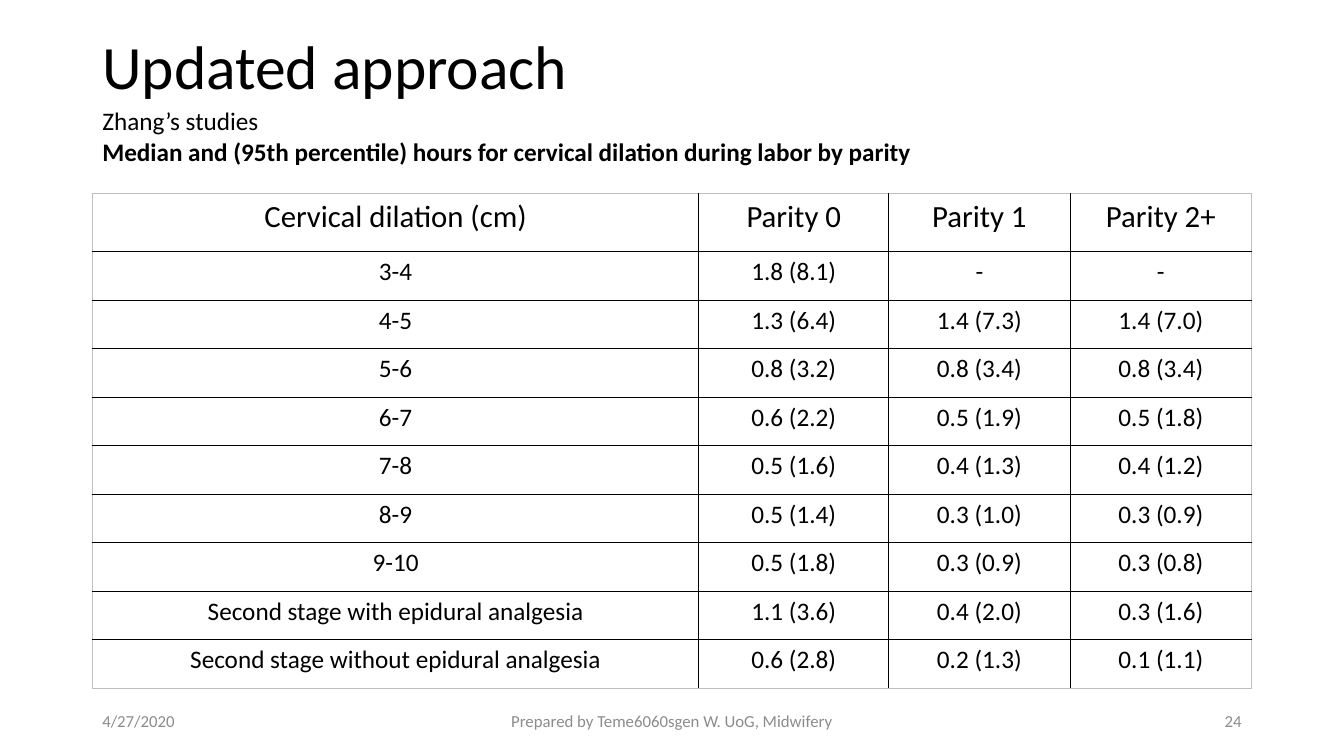
from lxml import etree
from pptx import Presentation
from pptx import util as u
from pptx.dml.color import RGBColor
from pptx.enum import text
from pptx.oxml import ns

# The slide is a grid of 160 columns by 90 rows of square units.
COLS, ROWS = 160, 90
UNIT = u.Inches(1) / 12
LEFT, WIDE = 11, 138

BLACK = RGBColor(0x00, 0x00, 0x00)
GRAY = RGBColor(0x8C, 0x8C, 0x8C)
PALE = RGBColor(0xBF, 0xBF, 0xBF)
FONT = "Calibri"

MID = text.MSO_ANCHOR.MIDDLE
CENTER = text.PP_ALIGN.CENTER
RIGHT = text.PP_ALIGN.RIGHT

TITLE = {"size": u.Pt(44)}
BODY = {"size": u.Pt(18)}
BOLD = {**BODY, "bold": True}
HEAD = {"size": u.Pt(22)}
FOOT = {"size": u.Pt(12), "color": GRAY}

WIDTHS = [72.2, 22.6, 21.6, 21.6]
HEAD_ROW, BODY_ROW = 6.95, 5.78
HOURS = [
    ["Cervical dilation (cm)", "Parity 0", "Parity 1", "Parity 2+"],
    ["3-4", "1.8 (8.1)", "-", "-"],
    ["4-5", "1.3 (6.4)", "1.4 (7.3)", "1.4 (7.0)"],
    ["5-6", "0.8 (3.2)", "0.8 (3.4)", "0.8 (3.4)"],
    ["6-7", "0.6 (2.2)", "0.5 (1.9)", "0.5 (1.8)"],
    ["7-8", "0.5 (1.6)", "0.4 (1.3)", "0.4 (1.2)"],
    ["8-9", "0.5 (1.4)", "0.3 (1.0)", "0.3 (0.9)"],
    ["9-10", "0.5 (1.8)", "0.3 (0.9)", "0.3 (0.8)"],
    ["Second stage with epidural analgesia", "1.1 (3.6)", "0.4 (2.0)", "0.3 (1.6)"],
    ["Second stage without epidural analgesia", "0.6 (2.8)", "0.2 (1.3)", "0.1 (1.1)"],
]


def span(count):
    """Turn grid units into a length."""
    return u.Emu(round(count * UNIT))


def write(para, words, look, align=None):
    run = para.add_run()
    run.text = words
    para.alignment = align
    for key, value in {"name": FONT, "color": BLACK, **look}.items():
        if key == "color":
            run.font.color.rgb = value
        else:
            setattr(run.font, key, value)


def add_text(slide, place, lines, anchor=None, align=None, space=None):
    """Add a text box; lines holds pairs of words and look."""
    frame = slide.shapes.add_textbox(*map(span, place)).text_frame
    frame.word_wrap = True
    frame.vertical_anchor = anchor
    for num, (words, look) in enumerate(lines):
        para = frame.add_paragraph() if num else frame.paragraphs[0]
        para.line_spacing = space
        write(para, words, look, align)


def add_edge(cell, side, outer):
    """Draw one cell border, paler and thinner on the table's rim."""
    width, color = (u.Pt(0.5), PALE) if outer else (u.Pt(1), BLACK)
    props = cell._tc.get_or_add_tcPr()
    line = etree.SubElement(props, ns.qn(f"a:ln{side}"), w=str(width))
    fill = etree.SubElement(line, ns.qn("a:solidFill"))
    etree.SubElement(fill, ns.qn("a:srgbClr"), val=str(color))


def add_table(slide, left, top, data):
    heights = [HEAD_ROW] + [BODY_ROW] * (len(data) - 1)
    size = (span(sum(WIDTHS)), span(sum(heights)))
    table = slide.shapes.add_table(
        len(data), len(WIDTHS), span(left), span(top), *size).table
    table.first_row = table.horz_banding = False
    for col, width in zip(table.columns, WIDTHS):
        col.width = span(width)
    for row, height in zip(table.rows, heights):
        row.height = span(height)
    for i, row in enumerate(data):
        for j, words in enumerate(row):
            cell = table.cell(i, j)
            write(cell.text_frame.paragraphs[0], words, BODY if i else HEAD, CENTER)
            rim = {"L": j == 0, "R": j == len(row) - 1,
                   "T": i == 0, "B": i == len(data) - 1}
            for side, outer in rim.items():
                add_edge(cell, side, outer)
            cell.fill.background()


def add_footer(slide):
    top, high = 83.4, 4.8
    parts = [
        (LEFT, 36, "4/27/2020", None),
        ((COLS - 54) / 2, 54, "Prepared by Teme6060sgen W. UoG, Midwifery", CENTER),
        (LEFT + WIDE - 36, 36, "24", RIGHT),
    ]
    for left, wide, words, align in parts:
        add_text(slide, (left, top, wide, high), [(words, FOOT)], MID, align)


def main():
    deck = Presentation()
    deck.slide_width, deck.slide_height = span(COLS), span(ROWS)
    slide = deck.slides.add_slide(deck.slide_layouts[6])
    add_text(slide, (LEFT, 3.6, WIDE, 9.4), [("Updated approach", TITLE)], MID, space=0.9)
    add_table(slide, LEFT, 23, HOURS)
    add_text(slide, (LEFT, 12, WIDE, 8.5), [
        ("Zhang’s studies", BODY),
        ("Median and (95th percentile) hours for cervical dilation during labor by parity", BOLD),
    ])
    add_footer(slide)
    deck.save("out.pptx")


if __name__ == "__main__":
    main()
